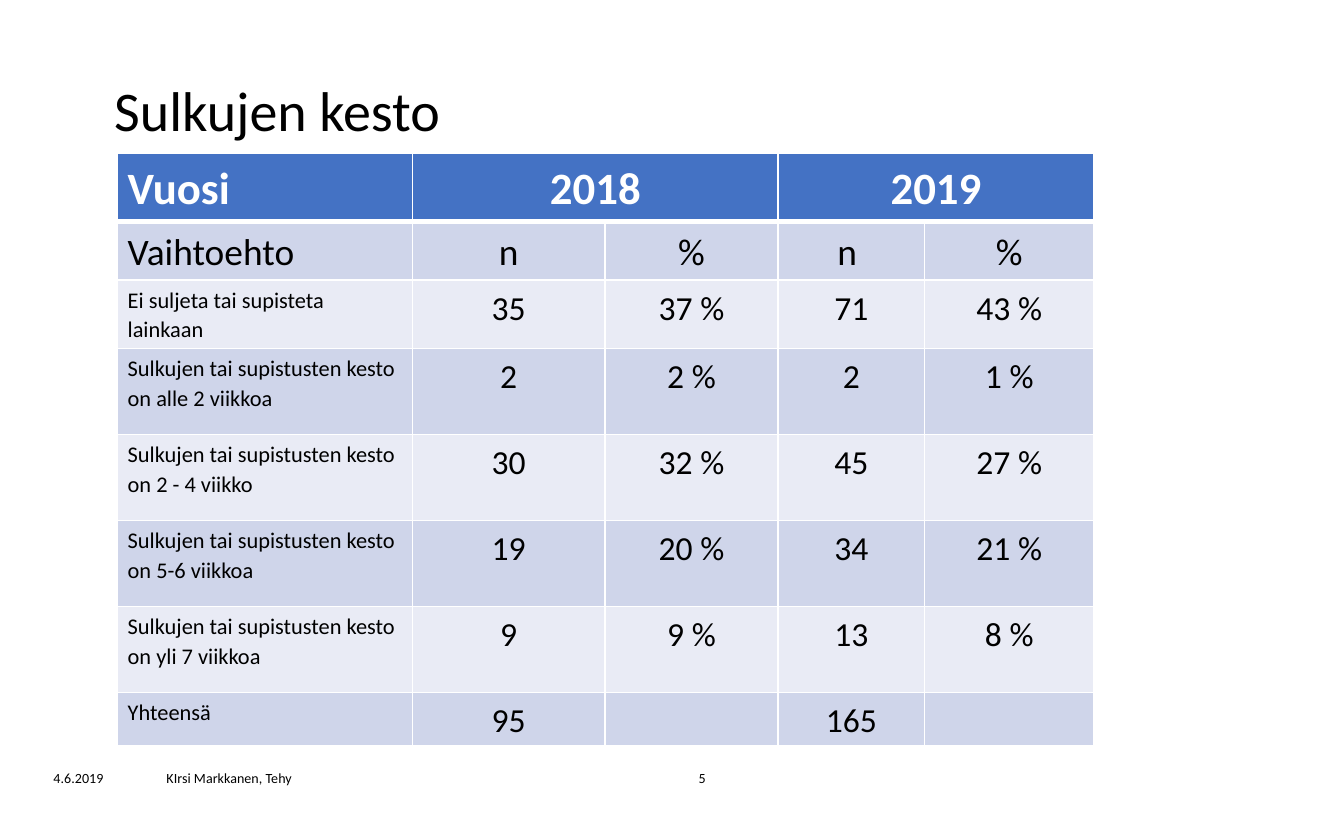
"""Build a slide with a table of closure durations for 2018 and 2019."""
from dataclasses import dataclass

from lxml import etree
from pptx import Presentation
from pptx import util as u
from pptx.dml.color import RGBColor
from pptx.enum import text
from pptx.oxml import ns


@dataclass(frozen=True)
class Theme:
    font: str = "Calibri"
    ink: str = "000000"
    white: str = "FFFFFF"
    header: str = "4472C4"
    bands: tuple = ("CFD5EA", "E9EBF5")
    title: float = 30
    year: float = 24
    heading: float = 20
    value: float = 18
    label: float = 12
    footer: float = 7.5
    spacing: float = 1.07
    rule: float = 1
    header_rule: float = 3


@dataclass(frozen=True)
class Box:
    """Place and size in percent of the slide's width and height."""
    left: float
    top: float
    width: float
    height: float


@dataclass(frozen=True)
class Footer:
    words: str
    left: float
    width: float


THEME = Theme()
WIDTH, HEIGHT = u.Inches(10), u.Inches(6.25)
TITLE = Box(7.5, 9.12, 86.2, 15.52)
TABLE = Box(8.7, 18.24, 72.8, 69.76)
COLUMNS = (22, 14.3, 12.9, 10.9, 12.6)
ROWS = (5.12, 4.64, 8, *[10.24] * 4, 4.64)
FOOTER_TOP, FOOTER_HEIGHT = 90.88, 5.28
FOOTERS = (
    Footer("4.6.2019", 3, 8),
    Footer("KIrsi Markkanen, Tehy", 11.4, 39.2),
    Footer("5", 51, 5),
)
DATA = (
    ("Vuosi", "2018", "", "2019", ""),
    ("Vaihtoehto", "n", "%", "n ", "%"),
    ("Ei suljeta tai supisteta lainkaan", "35", "37 %", "71", "43 %"),
    ("Sulkujen tai supistusten kesto on alle 2 viikkoa", "2", "2 %", "2", "1 %"),
    ("Sulkujen tai supistusten kesto on 2 - 4 viikko", "30", "32 %", "45", "27 %"),
    ("Sulkujen tai supistusten kesto on 5-6 viikkoa", "19", "20 %", "34", "21 %"),
    ("Sulkujen tai supistusten kesto on yli 7 viikkoa", "9", "9 %", "13", "8 %"),
    ("Yhteensä", "95", "", "165", ""),
)


def across(share: float) -> int:
    return round(WIDTH * share / 100)


def down(share: float) -> int:
    return round(HEIGHT * share / 100)


def frame(box: Box) -> tuple:
    return across(box.left), down(box.top), across(box.width), down(box.height)


def write(tf, words: str, size: float, color: str = THEME.ink, bold: bool = False,
          align=text.PP_ALIGN.LEFT, spacing: float = 1.0) -> None:
    p = tf.paragraphs[0]
    p.alignment, p.line_spacing = align, spacing
    r = p.add_run()
    r.text = words
    r.font.name, r.font.size, r.font.bold = THEME.font, u.Pt(size), bold
    r.font.color.rgb = RGBColor.from_string(color)


def add_title(s, words: str) -> None:
    sp = s.shapes.title
    sp.left, sp.top, sp.width, sp.height = frame(TITLE)
    tf = sp.text_frame
    tf.word_wrap, tf.auto_size = True, text.MSO_AUTO_SIZE.NONE
    tf.vertical_anchor = text.MSO_ANCHOR.TOP
    write(tf, words, THEME.title, spacing=0.9)


def add_footer(s, footer: Footer) -> None:
    box = Box(footer.left, FOOTER_TOP, footer.width, FOOTER_HEIGHT)
    tf = s.shapes.add_textbox(*frame(box)).text_frame
    tf.word_wrap = True
    write(tf, footer.words, THEME.footer)


def set_borders(cell, row: int) -> None:
    thick = {0: "lnB", 1: "lnT"}.get(row)
    for side in ("lnL", "lnR", "lnT", "lnB"):
        width = THEME.header_rule if side == thick else THEME.rule
        line = etree.SubElement(cell._tc.get_or_add_tcPr(), ns.qn(f"a:{side}"), w=str(u.Pt(width)))
        fill = etree.SubElement(line, ns.qn("a:solidFill"))
        etree.SubElement(fill, ns.qn("a:srgbClr"), val=THEME.white)


def fill_cell(cell, row: int, col: int, words: str) -> None:
    set_borders(cell, row)
    cell.fill.solid()
    color = THEME.bands[(row - 1) % 2] if row else THEME.header
    cell.fill.fore_color.rgb = RGBColor.from_string(color)
    cell.margin_left = cell.margin_right = u.Inches(0.08)
    cell.margin_top = cell.margin_bottom = u.Inches(0.04)
    if not words:
        return
    body = THEME.value if col else THEME.label
    size = {0: THEME.year, 1: THEME.heading}.get(row, body)
    align = text.PP_ALIGN.CENTER if col else text.PP_ALIGN.LEFT
    ink = THEME.ink if row else THEME.white
    write(cell.text_frame, words, size, ink, row == 0, align, THEME.spacing)
    if row == 2 and col:
        cell.text_frame.paragraphs[0].space_after = u.Pt(8)


def add_durations(s) -> None:
    table = s.shapes.add_table(len(ROWS), len(COLUMNS), *frame(TABLE)).table
    for column, share in zip(table.columns, COLUMNS):
        column.width = across(share)
    for row, share in zip(table.rows, ROWS):
        row.height = down(share)
    for first in (1, 3):
        table.cell(0, first).merge(table.cell(0, first + 1))
    for i, values in enumerate(DATA):
        for j, words in enumerate(values):
            fill_cell(table.cell(i, j), i, j, words)


def main() -> None:
    prs = Presentation()
    prs.slide_width, prs.slide_height = WIDTH, HEIGHT
    s = prs.slides.add_slide(prs.slide_layouts[5])
    for footer in FOOTERS:
        add_footer(s, footer)
    add_title(s, "Sulkujen kesto")
    add_durations(s)
    prs.save("out.pptx")


if __name__ == "__main__":
    main()
